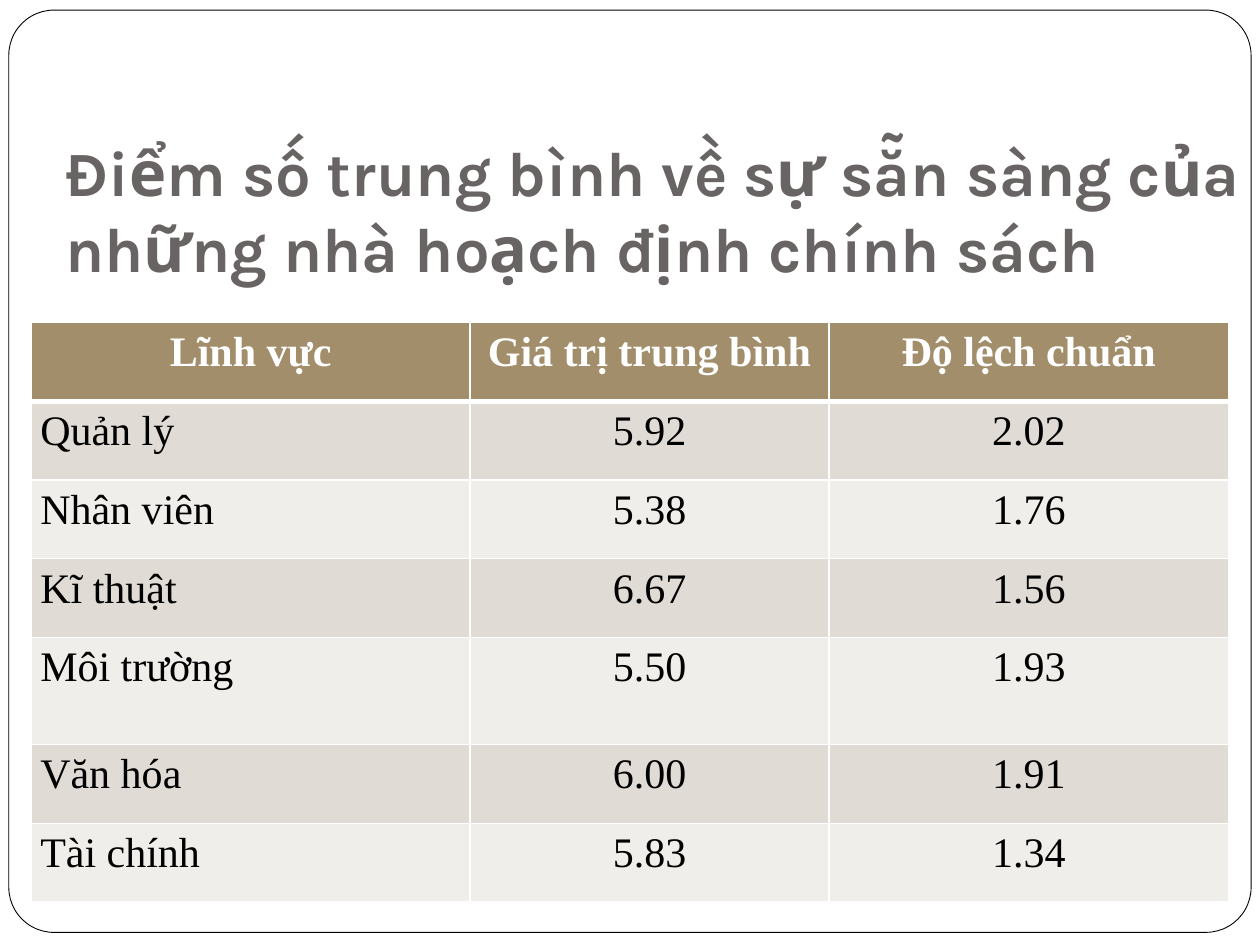
from lxml import etree
from pptx import Presentation
from pptx.dml.color import RGBColor
from pptx.enum import shapes, text
from pptx.oxml import ns
from pptx.util import Inches, Pt

WHITE = RGBColor(0xFF, 0xFF, 0xFF)
BLACK = RGBColor(0x00, 0x00, 0x00)
GREY = RGBColor(0x69, 0x64, 0x64)
BROWN = RGBColor(0xA2, 0x8E, 0x6A)
BANDS = (RGBColor(0xE0, 0xDB, 0xD4), RGBColor(0xF0, 0xEE, 0xEB))

TITLE = "Điểm số trung bình về sự sẵn sàng của những nhà hoạch định chính sách"
SCORES = [
    ("Lĩnh vực", "Giá trị trung bình", "Độ lệch chuẩn"),
    ("Quản lý", "5.92", "2.02"),
    ("Nhân viên", "5.38", "1.76"),
    ("Kĩ thuật", "6.67", "1.56"),
    ("Môi trường", "5.50", "1.93"),
    ("Văn hóa", "6.00", "1.91"),
    ("Tài chính", "5.83", "1.34"),
]
COLUMN_WIDTHS = (3.48, 2.85, 3.17)
ROW_HEIGHT = 0.625
TALL_ROW, TALL_HEIGHT = 4, 0.85


def write_text(frame, words, *, font, size, color, bold=False,
               align=text.PP_ALIGN.LEFT, spacing=None):
    """Write one formatted paragraph into a text frame."""
    para = frame.paragraphs[0]
    para.alignment = align
    if spacing:
        para.line_spacing = spacing
    span = para.add_run()
    span.text = words
    span.font.name = font
    span.font.size = Pt(size)
    span.font.bold = bold
    span.font.color.rgb = color


def add_frame(page, left, top, width, height):
    """Draw the rounded outline around the slide."""
    box = page.shapes.add_shape(
        shapes.MSO_SHAPE.ROUNDED_RECTANGLE, left, top, width, height)
    box.adjustments[0] = 0.049
    box.shadow.inherit = False
    box.fill.solid()
    box.fill.fore_color.rgb = WHITE
    box.line.color.rgb = BLACK
    box.line.width = Pt(0.5)


def add_title(page, left, top, width, height):
    """Place the heading at the bottom of its box."""
    frame = page.shapes.add_textbox(left, top, width, height).text_frame
    frame.word_wrap = True
    frame.vertical_anchor = text.MSO_ANCHOR.BOTTOM
    frame.margin_bottom = Inches(0.1)
    write_text(frame, TITLE, font="Karla", size=36, color=GREY, bold=True)


def set_borders(cell, **widths):
    """Give a cell white borders with widths in points by side."""
    properties = cell._tc.get_or_add_tcPr()
    for side in "LRTB":
        line = etree.SubElement(properties, ns.qn(f"a:ln{side}"),
                                w=str(Pt(widths.get(side, 1))))
        fill = etree.SubElement(line, ns.qn("a:solidFill"))
        etree.SubElement(fill, ns.qn("a:srgbClr"), val=str(WHITE))


def fill_cell(cell, words, row, column):
    """Format one cell by its row and column."""
    header = row == 0
    set_borders(cell, T=3 if row == 1 else 1, B=3 if header else 1)
    cell.fill.solid()
    cell.fill.fore_color.rgb = BROWN if header else BANDS[(row - 1) % 2]
    cell.margin_left = cell.margin_right = Inches(0.07)
    cell.margin_top = cell.margin_bottom = 0
    centred = header or column > 0
    write_text(cell.text_frame, words, font="Times New Roman", size=24,
               color=WHITE if header else BLACK, bold=header, spacing=1.15,
               align=text.PP_ALIGN.CENTER if centred else text.PP_ALIGN.LEFT)


def add_scores(page, left, top, width, height):
    """Build the table of mean scores and deviations."""
    table = page.shapes.add_table(
        len(SCORES), len(COLUMN_WIDTHS), left, top, width, height).table
    for column, size in zip(table.columns, COLUMN_WIDTHS):
        column.width = Inches(size)
    for row, values in enumerate(SCORES):
        table.rows[row].height = Inches(
            TALL_HEIGHT if row == TALL_ROW else ROW_HEIGHT)
        for column, words in enumerate(values):
            fill_cell(table.cell(row, column), words, row, column)


def main():
    """Build and save the one-slide deck."""
    deck = Presentation()
    deck.slide_width, deck.slide_height = Inches(10), Inches(7.5)
    page = deck.slides.add_slide(deck.slide_layouts[6])
    add_frame(page, Inches(0.07), Inches(0.08), Inches(9.86), Inches(7.32))
    add_title(page, Inches(0.42), Inches(0.33), Inches(9.58), Inches(2.03))
    add_scores(page, Inches(0.25), Inches(2.56), Inches(9.5), Inches(4.6))
    deck.save("out.pptx")


if __name__ == "__main__":
    main()
